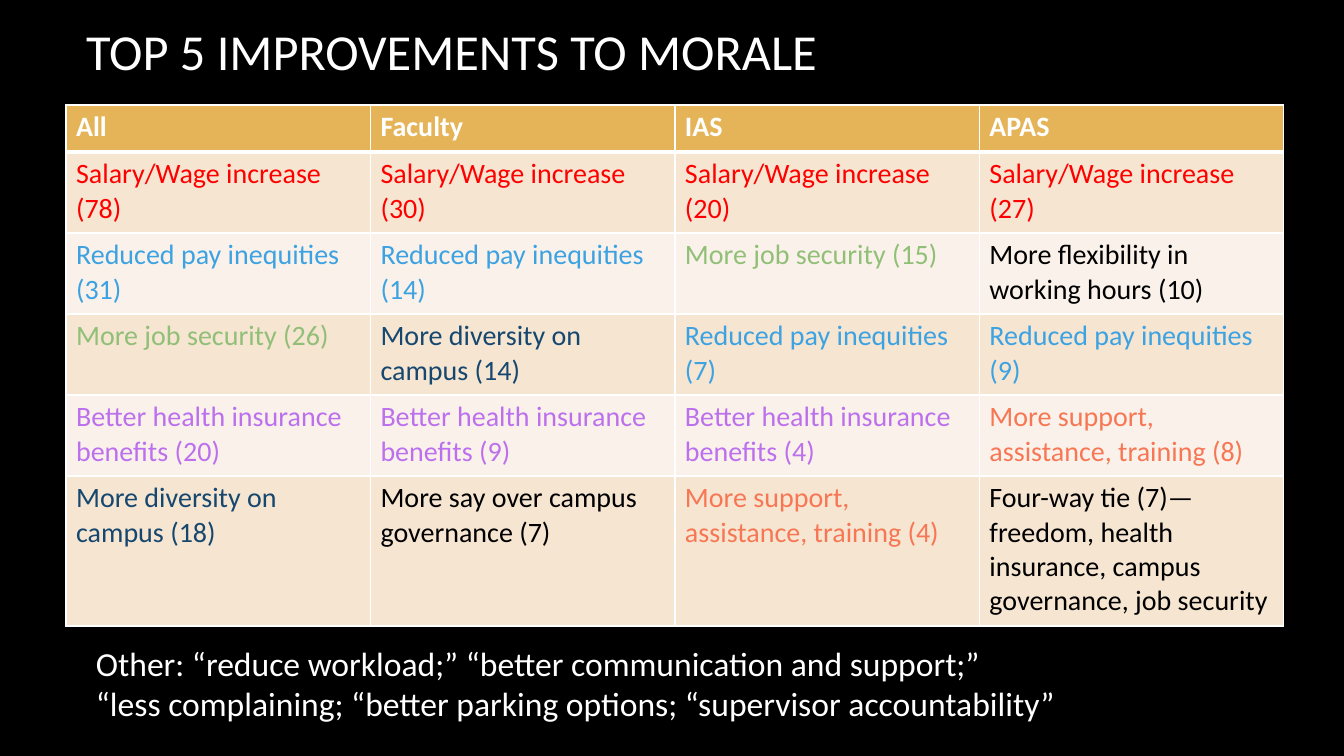
from lxml.etree import SubElement
from pptx import Presentation
from pptx.dml.color import RGBColor
from pptx.enum.text import MSO_ANCHOR, MSO_AUTO_SIZE, PP_ALIGN
from pptx.oxml.ns import qn
from pptx.util import Pt

SCALE = 914400 / 100.8  # EMU in one px

BLACK = RGBColor(0x00, 0x00, 0x00)
WHITE = RGBColor(0xFF, 0xFF, 0xFF)
GOLD = RGBColor(0xE5, 0xB4, 0x58)
SAND = RGBColor(0xF5, 0xE5, 0xD1)
CREAM = RGBColor(0xFA, 0xF2, 0xEA)
RED = RGBColor(0xFF, 0x00, 0x00)
BLUE = RGBColor(0x3C, 0xA2, 0xE2)
GREEN = RGBColor(0x91, 0xBF, 0x77)
NAVY = RGBColor(0x16, 0x47, 0x6F)
PURPLE = RGBColor(0xBC, 0x70, 0xEE)
CORAL = RGBColor(0xF7, 0x77, 0x54)

# Topics named by several groups, each with its own colour
SALARY = "Salary/Wage increase"
EQUITY = "Reduced pay inequities"
JOBS = "More job security"
DIVERSE = "More diversity on campus"
HEALTH = "Better health insurance benefits"
SUPPORT = "More support, assistance, training"
INKS = {SALARY: RED, EQUITY: BLUE, JOBS: GREEN,
        DIVERSE: NAVY, HEALTH: PURPLE, SUPPORT: CORAL}

HEADS = ["All", "Faculty", "IAS", "APAS"]
RANKS = [
    [(SALARY, 78), (SALARY, 30), (SALARY, 20), (SALARY, 27)],
    [(EQUITY, 31), (EQUITY, 14), (JOBS, 15),
     ("More flexibility in working hours", 10)],
    [(JOBS, 26), (DIVERSE, 14), (EQUITY, 7), (EQUITY, 9)],
    [(HEALTH, 20), (HEALTH, 9), (HEALTH, 4), (SUPPORT, 8)],
    [(DIVERSE, 18), ("More say over campus governance", 7),
     (SUPPORT, 4), ("Four-way tie", 7)],
]
TIE = "—freedom, health insurance, campus governance, job security"
HEIGHTS = [47, 81, 81, 81, 81, 150]
OTHER = [
    "Other: “reduce workload;” “better communication and support;”",
    "“less complaining; “better parking options; “supervisor accountability”",
]


def px(count):
    return round(count * SCALE)


class Deck:
    face = "Calibri"

    def __init__(self, wide, high):
        self.file = Presentation()
        self.file.slide_width = px(wide)
        self.file.slide_height = px(high)
        self.slide = self.file.slides.add_slide(self.file.slide_layouts[5])
        fill = self.slide.background.fill
        fill.solid()
        fill.fore_color.rgb = BLACK

    def put(self, frame, lines, size, color, bold=False):
        frame.word_wrap = True
        frame.text = "\n".join(lines)
        for para in frame.paragraphs:
            para.alignment = PP_ALIGN.LEFT
            font = para.font
            font.name, font.size, font.bold = self.face, Pt(size), bold
            font.color.rgb = color

    def title(self, text, left, top, wide, high):
        shape = self.slide.shapes.title
        shape.left, shape.top = px(left), px(top)
        shape.width, shape.height = px(wide), px(high)
        frame = shape.text_frame
        self.put(frame, [text], 36, WHITE)
        frame.auto_size = MSO_AUTO_SIZE.NONE
        frame.vertical_anchor = MSO_ANCHOR.MIDDLE

    def note(self, lines, left, top, wide, high):
        box = self.slide.shapes.add_textbox(
            px(left), px(top), px(wide), px(high))
        self.put(box.text_frame, lines, 24, WHITE)
        box.text_frame.auto_size = MSO_AUTO_SIZE.SHAPE_TO_FIT_TEXT

    def grid(self, rows, cols, left, top, wide, heights):
        table = self.slide.shapes.add_table(
            rows, cols, px(left), px(top), px(wide), px(sum(heights))).table
        for row, high in zip(table.rows, heights):
            row.height = px(high)
        return table

    def cell(self, cell, text, color, back, over=1, under=1, bold=False):
        self.put(cell.text_frame, [text], 20, color, bold)
        props = cell._tc.get_or_add_tcPr()
        for side, width in zip("LRTB", (1, 1, over, under)):
            line = SubElement(props, qn(f"a:ln{side}"), w=str(Pt(width)))
            paint = SubElement(line, qn("a:solidFill"))
            SubElement(paint, qn("a:srgbClr"), val=str(WHITE))
        cell.fill.solid()
        cell.fill.fore_color.rgb = back


def main():
    deck = Deck(1344, 756)
    deck.title("TOP 5 IMPROVEMENTS TO MORALE", 76, 12, 1117, 77)

    # Table: header row, then banded ranks
    table = deck.grid(len(HEIGHTS), len(HEADS), 66, 105, 1218, HEIGHTS)
    for col, head in enumerate(HEADS):
        deck.cell(table.cell(0, col), head, WHITE, GOLD, under=3, bold=True)
    for row, rank in enumerate(RANKS, 1):
        for col, (topic, votes) in enumerate(rank):
            text = f"{topic} ({votes})"
            if topic == "Four-way tie":
                text += TIE
            deck.cell(table.cell(row, col), text, INKS.get(topic, BLACK),
                      SAND if row % 2 else CREAM, over=3 if row == 1 else 1)

    # Other answers
    deck.note(OTHER, 86, 638, 1117, 92)
    deck.file.save("out.pptx")


if __name__ == "__main__":
    main()
